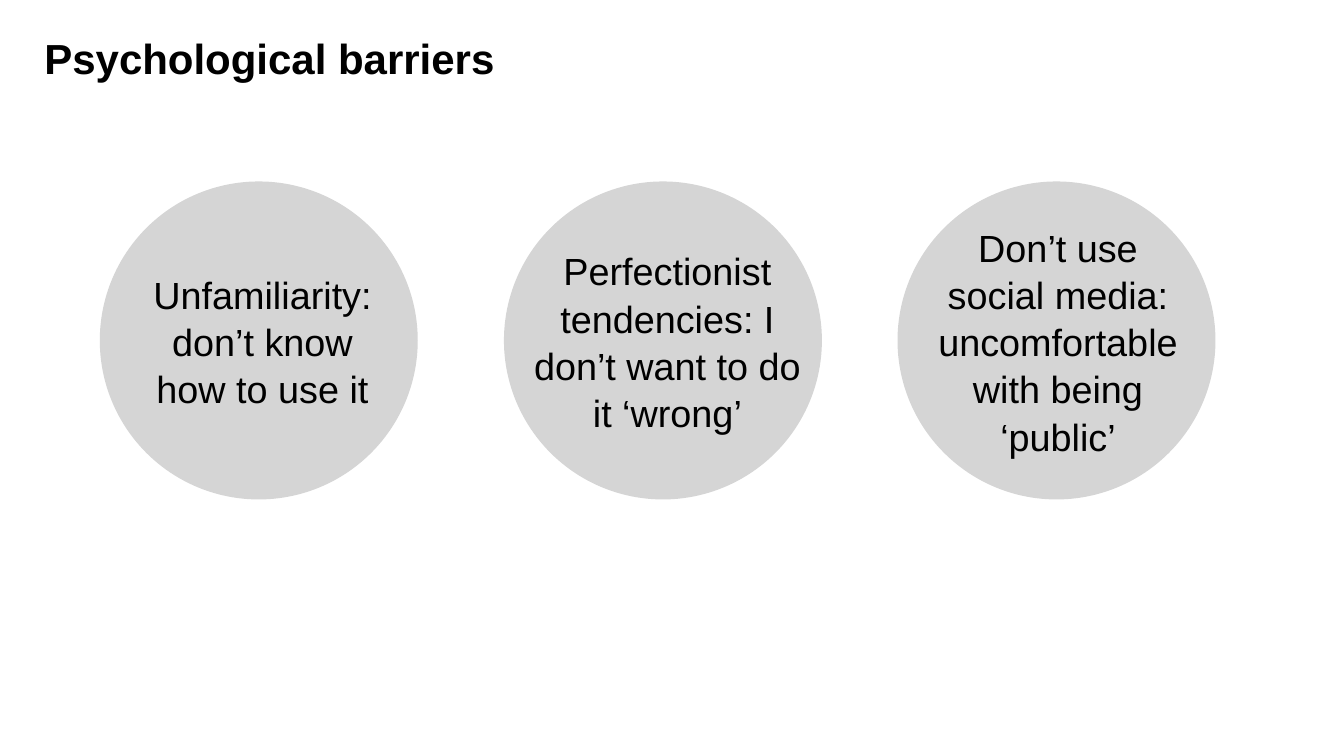
"""Build the slide on psychological barriers: a title and three labelled circles."""
from pptx import Presentation
from pptx import util as u
from pptx.dml.color import RGBColor
from pptx.enum import shapes, text

COLORS = {"ink": "000000", "circle": "D5D5D5", "paper": "FFFFFF"}
FONT = "Arial"
DIAMETER = 6.31
CIRCLE_TOP = 3.6
LABEL_MIDDLE = 6.76
LINE_HEIGHT = 0.91
LABEL_INSET = 0.06


def write(shape, content, size=54, bold=False, align=text.PP_ALIGN.CENTER, inset=0):
    frame = shape.text_frame
    frame.word_wrap = True
    frame.auto_size = text.MSO_AUTO_SIZE.NONE
    frame.vertical_anchor = text.MSO_ANCHOR.MIDDLE
    frame.margin_left = frame.margin_right = u.Inches(inset)
    frame.margin_top = frame.margin_bottom = u.Inches(inset)
    paragraph = frame.paragraphs[0]
    paragraph.alignment = align
    paragraph.line_spacing = 1.04
    run = paragraph.add_run()
    run.text = content
    run.font.name = FONT
    run.font.size = u.Pt(size)
    run.font.bold = bold
    run.font.color.rgb = RGBColor.from_string(COLORS["ink"])


presentation = Presentation()
presentation.slide_width = u.Inches(26.67)
presentation.slide_height = u.Inches(15)
slide = presentation.slides.add_slide(presentation.slide_layouts[5])
slide.background.fill.solid()
slide.background.fill.fore_color.rgb = RGBColor.from_string(COLORS["paper"])

title = slide.shapes.title
title.left, title.top = u.Inches(0.88), u.Inches(0.6)
title.width, title.height = u.Inches(24.56), u.Inches(1.06)
write(title, "Psychological barriers", size=60, bold=True, align=text.PP_ALIGN.LEFT)

barriers = [
    # circle left, label left, label width, line count, wording
    (1.98, 2.86, 4.7, 3, "Unfamiliarity: don’t know how to use it"),
    (10, 10.53, 5.43, 4, "Perfectionist tendencies: I don’t want to do it ‘wrong’"),
    (17.81, 18.47, 5.05, 5, "Don’t use social media: uncomfortable with being ‘public’"),
]
for circle_left, label_left, label_width, line_count, wording in barriers:
    circle = slide.shapes.add_shape(
        shapes.MSO_SHAPE.OVAL, u.Inches(circle_left), u.Inches(CIRCLE_TOP),
        u.Inches(DIAMETER), u.Inches(DIAMETER))
    circle.shadow.inherit = False
    circle.fill.solid()
    circle.fill.fore_color.rgb = RGBColor.from_string(COLORS["circle"])
    circle.line.fill.background()

    label_height = line_count * LINE_HEIGHT + 2 * LABEL_INSET
    label = slide.shapes.add_textbox(
        u.Inches(label_left), u.Inches(LABEL_MIDDLE - label_height / 2),
        u.Inches(label_width), u.Inches(label_height))
    write(label, wording, inset=LABEL_INSET)

presentation.save("out.pptx")
